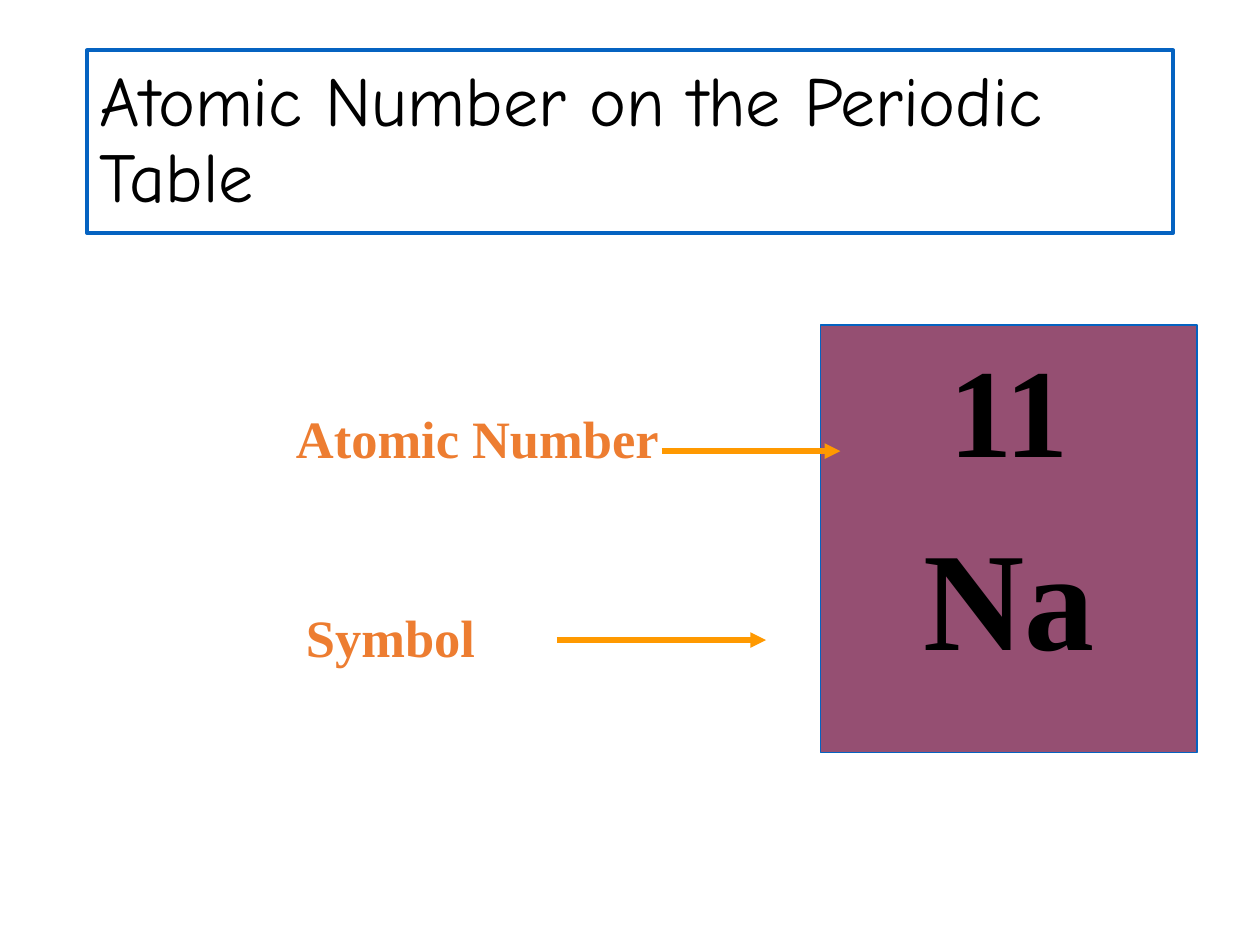
from lxml.etree import SubElement
from pptx import Presentation
from pptx.dml.color import RGBColor
from pptx.enum.shapes import MSO_CONNECTOR as CONN, MSO_SHAPE as SHAPE
from pptx.enum.text import MSO_ANCHOR as ANCHOR, MSO_AUTO_SIZE as AUTO, PP_ALIGN as ALIGN
from pptx.oxml.ns import qn
from pptx.util import Inches, Pt

SERIF = "Times New Roman"
BLACK, BLUE, PLUM, ORANGE, AMBER = "000000", "0563C1", "954F72", "ED7D31", "FF9900"


def rgb(value):
    """Turn a hex string into a colour."""
    return RGBColor.from_string(value)


def set_line(line, color, width):
    """Give a line its colour and its width in points."""
    line.color.rgb = rgb(color)
    line.width = Pt(width)


def write(p, text, size, font=SERIF, color=BLACK, bold=False, align=ALIGN.LEFT):
    """Write one formatted run into a paragraph."""
    p.alignment = align
    r = p.add_run()
    r.text = text
    r.font.size, r.font.name, r.font.bold = Pt(size), font, bold
    r.font.color.rgb = rgb(color)


def hang(p, indent, before):
    """Give a paragraph a hanging indent and a proportional space before."""
    pPr = p._p.get_or_add_pPr()
    pPr.set("marL", str(Inches(indent)))
    pPr.set("indent", str(-Inches(indent)))
    spacing = SubElement(pPr, qn("a:spcBef"))
    SubElement(spacing, qn("a:spcPct"), val=str(before * 1000))


def add_title(s, box, text):
    """Frame the title placeholder and fill it."""
    sp = s.shapes.title
    sp.left, sp.top, sp.width, sp.height = map(Inches, box)
    set_line(sp.line, BLUE, 2.25)
    tf = sp.text_frame
    tf.word_wrap, tf.auto_size, tf.vertical_anchor = True, AUTO.NONE, ANCHOR.MIDDLE
    p = tf.paragraphs[0]
    p.line_spacing = 0.9
    write(p, text, 40, font="Comic Neue")


def add_tile(shapes, box, rows):
    """Draw the element tile with one centred paragraph per row."""
    sp = shapes.add_shape(SHAPE.RECTANGLE, *map(Inches, box))
    sp.shadow.inherit = False
    sp.fill.solid()
    sp.fill.fore_color.rgb = rgb(PLUM)
    set_line(sp.line, BLUE, 0.75)
    tf = sp.text_frame
    tf.vertical_anchor = ANCHOR.TOP
    for i, (text, size) in enumerate(rows):
        p = tf.add_paragraph() if i else tf.paragraphs[0]
        hang(p, 0.38, 20)
        write(p, text, size, bold=True, align=ALIGN.CENTER)


def add_label(shapes, box, text):
    """Place a caption that grows with its text."""
    tf = shapes.add_textbox(*map(Inches, box)).text_frame
    tf.word_wrap, tf.auto_size = False, AUTO.SHAPE_TO_FIT_TEXT
    write(tf.paragraphs[0], text, 30, color=ORANGE, bold=True)


def add_arrow(shapes, x1, x2, y):
    """Draw a level arrow pointing right."""
    ends = map(Inches, (x1, y, x2, y))
    arrow = shapes.add_connector(CONN.STRAIGHT, *ends)
    set_line(arrow.line, AMBER, 3)
    SubElement(arrow.line._get_or_add_ln(), qn("a:tailEnd"), type="triangle")
    SubElement(arrow._element.spPr, qn("a:effectLst"))


def add_diagram(s, box):
    """Group the tile with its captions and arrows inside the box."""
    x, y, w, h = box
    shapes = s.shapes.add_group_shape().shapes
    tile_w = 2.99
    add_tile(shapes, (x + w - tile_w, y, tile_w, h), [("11", 72), ("Na", 80)])
    add_label(shapes, (x, y + 0.59, 3.08, 0.6), "Atomic Number")
    add_label(shapes, (x + 0.08, y + 2.17, 1.54, 0.6), "Symbol")
    add_arrow(shapes, x + 2.17, x + 3.83, y + 2.5)
    add_arrow(shapes, x + 3, x + 4.42, y + 1)


def main():
    """Build the slide and save it."""
    prs = Presentation()
    prs.slide_width, prs.slide_height = Inches(10), Inches(7.5)
    s = prs.slides.add_slide(prs.slide_layouts[5])
    add_title(s, (0.69, 0.4, 8.62, 1.45), "Atomic Number on the Periodic Table")
    add_diagram(s, (2.25, 2.58, 7.25, 3.39))
    prs.save("out.pptx")


if __name__ == "__main__":
    main()
